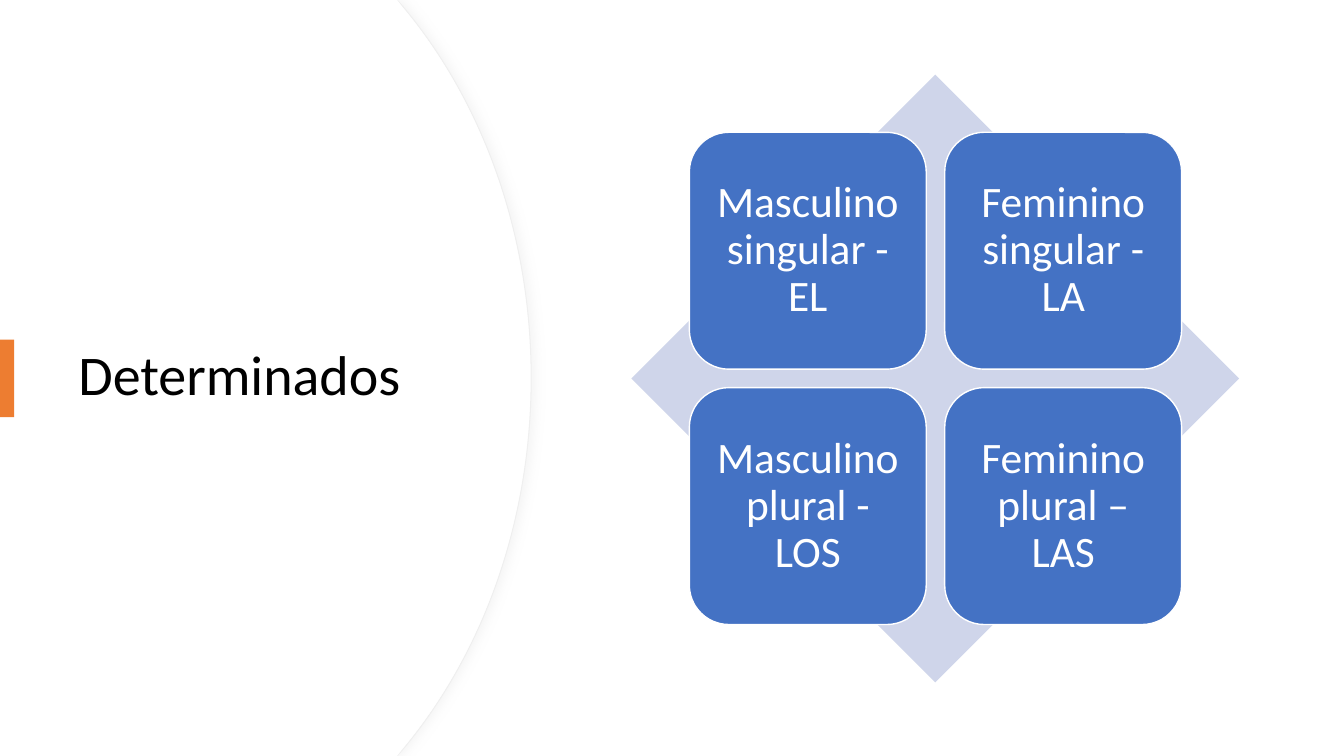
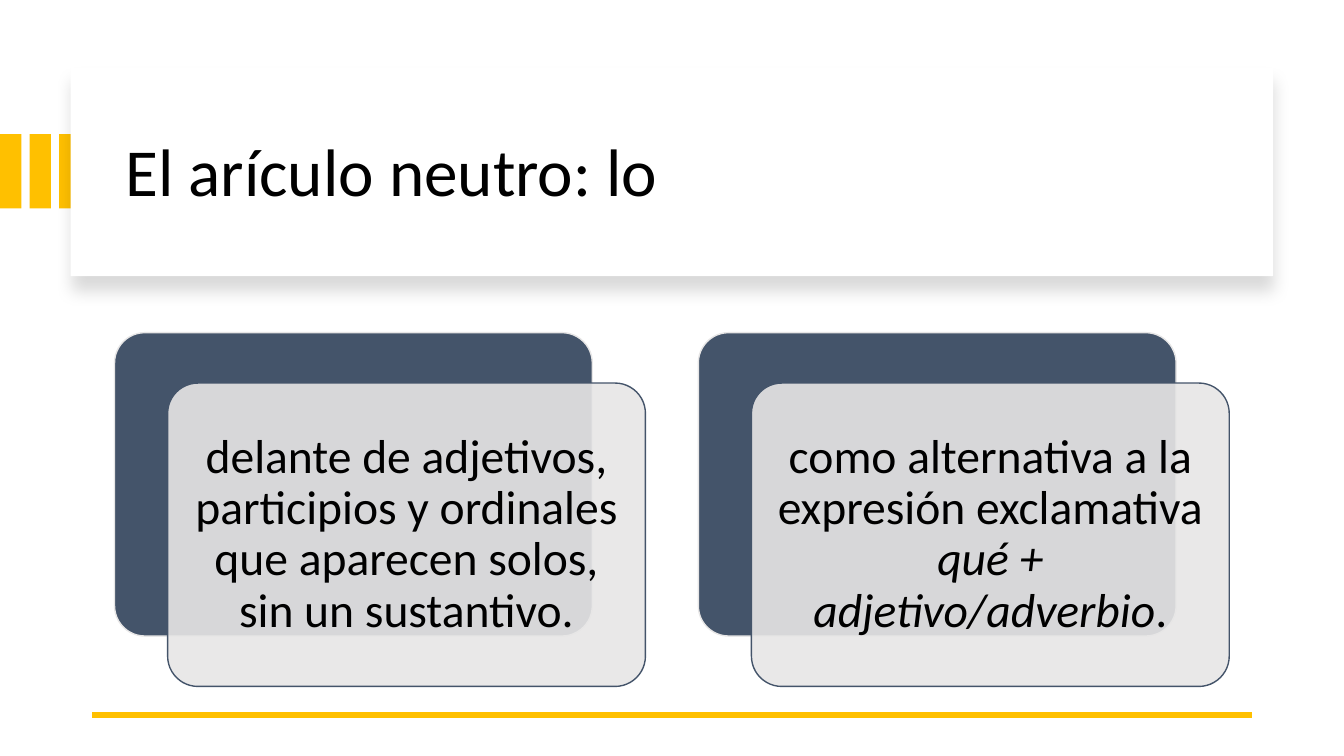
from dataclasses import dataclass
from typing import Optional

from lxml import etree
from pptx import Presentation, util as u
from pptx.dml.color import RGBColor
from pptx.enum import shapes, text
from pptx.oxml.ns import qn

# The page is a grid of square cells.
COLUMNS, ROWS = 160, 90
CELL = u.Inches(7.5) / ROWS

FONT = "Calibri"
WHITE = RGBColor(0xFF, 0xFF, 0xFF)
BLACK = RGBColor(0x00, 0x00, 0x00)
ORANGE = RGBColor(0xED, 0x7D, 0x31)
GOLD = RGBColor(0xFF, 0xC0, 0x00)
BLUE = RGBColor(0x44, 0x72, 0xC4)
PALE_BLUE = RGBColor(0xCF, 0xD5, 0xEA)
SLATE = RGBColor(0x44, 0x54, 0x6A)
LIGHT_GREY = RGBColor(0xE7, 0xE6, 0xE6)
EDGE_GREY = RGBColor(0xEF, 0xEF, 0xEF)
SHADOW_GREY = RGBColor(0xD9, 0xD9, 0xD9)

RECTANGLE = shapes.MSO_SHAPE.RECTANGLE
ROUNDED = shapes.MSO_SHAPE.ROUNDED_RECTANGLE
DIAMOND = shapes.MSO_SHAPE.DIAMOND


@dataclass(frozen=True)
class Box:
    """Place and size in grid cells."""
    left: float
    top: float
    width: float
    height: float

    def moved(self, across: float = 0, down: float = 0) -> "Box":
        return Box(self.left + across, self.top + down, self.width, self.height)

    def lengths(self) -> tuple:
        return tuple(cells(n) for n in (self.left, self.top, self.width, self.height))


@dataclass(frozen=True)
class Span:
    words: str
    italic: bool = False


@dataclass(frozen=True)
class Shadow:
    """Opacity in percent, blur and distance in points, angle in degrees."""
    color: RGBColor
    opacity: int
    blur: float
    distance: float
    angle: int


def cells(count: float) -> int:
    return round(count * CELL)


def write(shape, *spans: Span, size: float, color: RGBColor = BLACK,
          align=text.PP_ALIGN.LEFT, inset: Optional[float] = None) -> None:
    frame = shape.text_frame
    frame.word_wrap = True
    frame.vertical_anchor = text.MSO_ANCHOR.MIDDLE
    if inset is not None:
        frame.margin_left = frame.margin_right = u.Inches(inset)
        frame.margin_top = frame.margin_bottom = u.Inches(inset)
    para = frame.paragraphs[0]
    para.alignment = align
    para.line_spacing = 0.9
    for span in spans:
        run = para.add_run()
        run.text = span.words
        run.font.name = FONT
        run.font.size = u.Pt(size)
        run.font.italic = span.italic
        run.font.color.rgb = color


def add_opacity(color_element, percent: int) -> None:
    etree.SubElement(color_element, qn("a:alpha"), val=str(percent * 1000))


def paint(shape, fill: RGBColor, *, line: Optional[RGBColor] = None, weight: float = 1,
          opacity: int = 100, shadow: Optional[Shadow] = None) -> None:
    shape.fill.solid()
    shape.fill.fore_color.rgb = fill
    properties = shape._element.spPr
    if opacity < 100:
        add_opacity(properties.find(qn("a:solidFill")).find(qn("a:srgbClr")), opacity)
    if line is None:
        shape.line.fill.background()
    else:
        shape.line.color.rgb = line
        shape.line.width = u.Pt(weight)
    shape.shadow.inherit = False
    if shadow:
        outer = etree.SubElement(
            properties.find(qn("a:effectLst")), qn("a:outerShdw"),
            blurRad=str(u.Pt(shadow.blur)), dist=str(u.Pt(shadow.distance)),
            dir=str(shadow.angle * 60000), algn="l", rotWithShape="0")
        add_opacity(etree.SubElement(outer, qn("a:srgbClr"), val=str(shadow.color)),
                    shadow.opacity)


def add_block(page, kind, box: Box, fill: RGBColor, *,
              corner: Optional[float] = None, **style):
    shape = page.shapes.add_shape(kind, *box.lengths())
    if corner is not None:
        shape.adjustments[0] = corner
    paint(shape, fill, **style)
    return shape


def add_title(page, box: Box, words: str, size: float) -> None:
    write(page.shapes.add_textbox(*box.lengths()), Span(words), size=size)


def add_rule(page, left: float, right: float, row: float) -> None:
    rule = page.shapes.add_connector(shapes.MSO_CONNECTOR.STRAIGHT, cells(right),
                                     cells(row), cells(left), cells(row))
    rule.line.color.rgb = GOLD
    rule.line.width = u.Pt(4.5)
    etree.SubElement(rule._element.spPr, qn("a:effectLst"))


def bend(shape, first_segment: int) -> None:
    """Turn three straight segments into one cubic curve."""
    segments = list(shape._element.iter(qn("a:lnTo")))[first_segment:first_segment + 3]
    curve = etree.Element(qn("a:cubicBezTo"))
    segments[0].addprevious(curve)
    for segment in segments:
        curve.append(segment[0])
        segment.getparent().remove(segment)


def add_curved_panel(page, right: float, **style) -> None:
    """Fill the page's left side up to a bulge that reaches the column `right`."""
    upper = [(47.28, 0), (right - 15.12, 0.96), (right - 5.76, 12.24), (right, 27.84)]
    lower = [(x, ROWS - y) for x, y in reversed(upper)]
    outline = [*upper, (right, ROWS / 2), *lower, (0, ROWS)]
    builder = page.shapes.build_freeform(0, 0)
    builder.add_line_segments([(cells(x), cells(y)) for x, y in outline])
    panel = builder.convert_to_shape()
    for first_segment in (5, 2):
        bend(panel, first_segment)
    paint(panel, WHITE, **style)


def build_determinate_articles(page) -> None:
    add_curved_panel(page, 63.24, line=EDGE_GREY, weight=0.75,
                     shadow=Shadow(SHADOW_GREY, 25, 7, 3, 0))
    add_curved_panel(page, 63.12)
    add_title(page, Box(8.16, 15.24, 47.28, 59.4), "Determinados", 40)
    add_block(page, RECTANGLE, Box(0, 40.44, 1.68, 9.24), ORANGE)
    add_block(page, DIAMOND, Box(75.17, 8.88, 72.36, 72.36), PALE_BLUE)

    articles = (("Masculino singular - EL", "Feminino singular - LA"),
                ("Masculino plural - LOS", "Feminino plural – LAS"))
    first, pitch = Box(82.07, 15.75, 28.2, 28.2), 30.4
    for row, pair in enumerate(articles):
        for column, words in enumerate(pair):
            tile = add_block(page, ROUNDED, first.moved(column * pitch, row * pitch),
                             BLUE, line=WHITE)
            write(tile, Span(words), size=31, color=WHITE,
                  align=text.PP_ALIGN.CENTER, inset=0.13)


def build_neuter_article(page) -> None:
    for index in range(3):
        add_block(page, RECTANGLE, Box(0, 15.96, 2.56, 8.84).moved(index * 3.52), GOLD)
    add_block(page, RECTANGLE, Box(8.4, 8.04, 143.16, 24.84), WHITE,
              shadow=Shadow(BLACK, 15, 11, 10, 90))
    add_title(page, Box(13.74, 10.6, 133.56, 20.4), "El arículo neutro: lo", 48)
    add_rule(page, 11, 149.04, 85.12)

    uses = (
        (Span("delante de adjetivos, participios y ordinales que aparecen solos, "
              "sin un sustantivo."),),
        (Span("como alternativa a la expresión exclamativa "),
         Span("qué + adjetivo/adverbio", italic=True), Span(".")),
    )
    for index, spans in enumerate(uses):
        back = Box(13.64, 39.6, 56.88, 36.12).moved(index * 69.5)
        add_block(page, ROUNDED, back, SLATE, corner=0.1, line=LIGHT_GREY)
        card = add_block(page, ROUNDED, back.moved(6.32, 6), LIGHT_GREY, corner=0.1,
                         line=SLATE, opacity=90)
        write(card, *spans, size=34, align=text.PP_ALIGN.CENTER, inset=0.14)


def main() -> None:
    deck = Presentation()
    deck.slide_width, deck.slide_height = cells(COLUMNS), cells(ROWS)
    blank = deck.slide_layouts[6]
    for build in (build_determinate_articles, build_neuter_article):
        build(deck.slides.add_slide(blank))
    deck.save("out.pptx")


if __name__ == "__main__":
    main()
